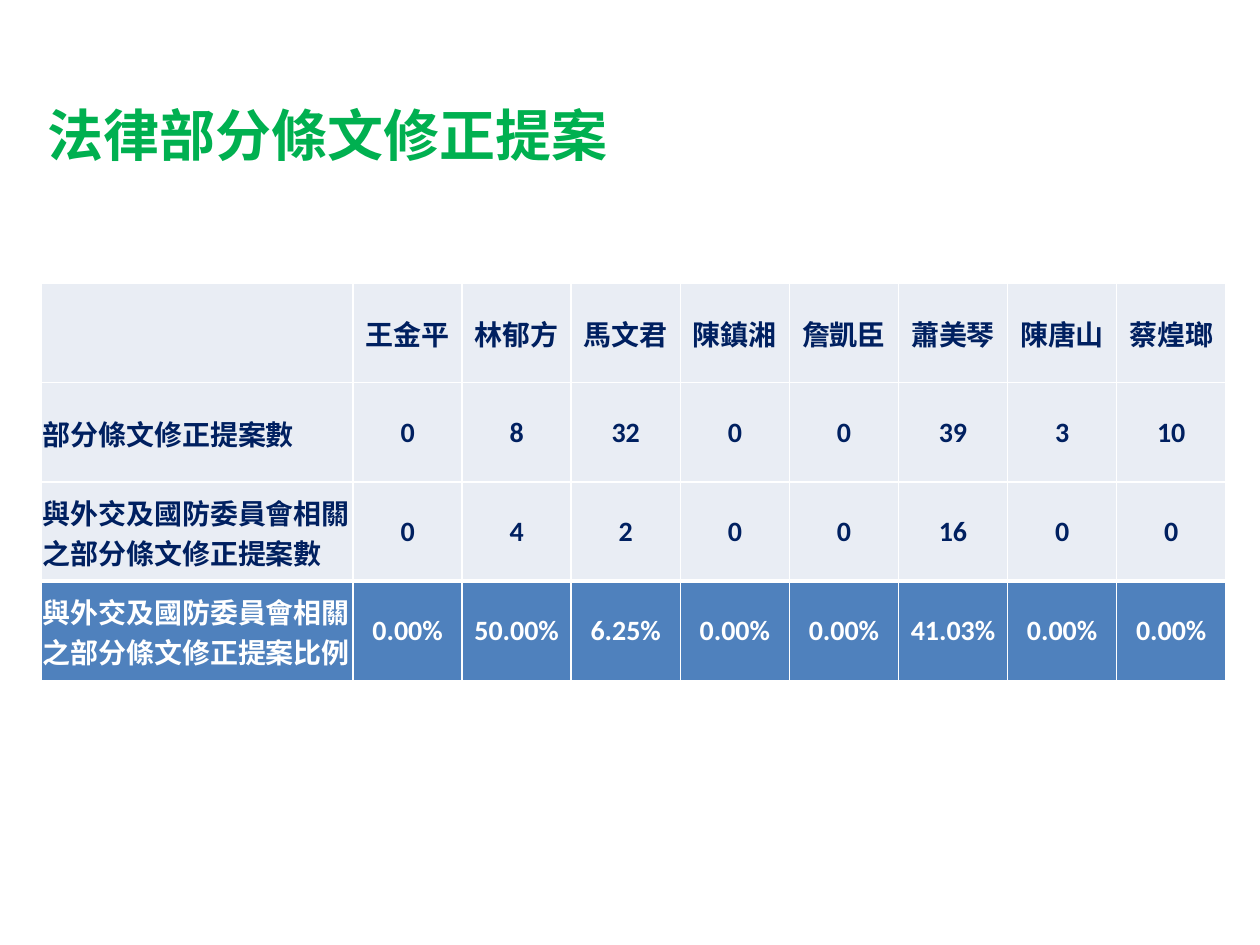
from lxml import etree
from pptx import Presentation, util as u
from pptx.dml.color import RGBColor
from pptx.enum import text
from pptx.oxml.ns import qn

GREEN = RGBColor(0x00, 0xB0, 0x50)
NAVY = RGBColor(0x00, 0x20, 0x60)
BLUE = RGBColor(0x4F, 0x81, 0xBD)
PALE = RGBColor(0xE9, 0xED, 0xF4)
WHITE = RGBColor(0xFF, 0xFF, 0xFF)

TITLE_FONT = "Noto Sans CJK SC"
NAMES = ["王金平", "林郁方", "馬文君", "陳鎮湘", "詹凱臣", "蕭美琴", "陳唐山", "蔡煌瑯"]
TOTALS = [0, 8, 32, 0, 0, 39, 3, 10]
RELATED = [0, 4, 2, 0, 0, 16, 0, 0]


def style_run(r, size, font, color):
    """Apply bold type of one size, font and colour to a run."""
    r.font.size, r.font.name, r.font.bold = u.Pt(size), font, True
    r.font.color.rgb = color


def set_borders(cell, top):
    """Draw white cell borders, with the given top width in points."""
    tc_pr = cell._tc.get_or_add_tcPr()
    for side, width in (("L", 1), ("R", 1), ("T", top), ("B", 1)):
        ln = etree.SubElement(tc_pr, qn(f"a:ln{side}"), w=str(u.Pt(width)))
        fill = etree.SubElement(ln, qn("a:solidFill"))
        etree.SubElement(fill, qn("a:srgbClr"), val=str(WHITE))


def add_title(s, box, title):
    """Place the slide title in the box."""
    tf = s.shapes.add_textbox(*box).text_frame
    tf.word_wrap = False
    tf.auto_size = text.MSO_AUTO_SIZE.SHAPE_TO_FIT_TEXT
    tf.text = title
    r = tf.paragraphs[0].runs[0]
    style_run(r, 32, TITLE_FONT, GREEN)
    etree.SubElement(r.font._element, qn("a:ea"), typeface=TITLE_FONT)


def format_cell(cell, value, label, ratio):
    """Fill one table cell, as a label or a value, plain or as a ratio."""
    set_borders(cell, 3 if ratio else 1)
    cell.fill.solid()
    cell.fill.fore_color.rgb = BLUE if ratio else PALE
    cell.vertical_anchor = text.MSO_ANCHOR.MIDDLE
    cell.margin_left = cell.margin_top = cell.margin_right = u.Inches(0.01)
    cell.margin_bottom = 0
    cell.text = value
    p = cell.text_frame.paragraphs[0]
    p.alignment = text.PP_ALIGN.LEFT if label else text.PP_ALIGN.CENTER
    for r in p.runs:
        style_run(r, 16, "Calibri", WHITE if ratio else NAVY)


def add_proposal_table(s, box, rows):
    """Place the proposal table, with its ratio row last, in the box."""
    count = len(rows[0])
    table = s.shapes.add_table(len(rows), count, *box).table
    table.first_row = table.horz_banding = False
    label_width = int(box[2] * 0.263)
    for i, col in enumerate(table.columns):
        col.width = (box[2] - label_width) // (count - 1) if i else label_width
    for i, row in enumerate(rows):
        for j, value in enumerate(row):
            format_cell(table.cell(i, j), value, j == 0, i == len(rows) - 1)


def main():
    """Build and save the slide."""
    prs = Presentation()
    prs.slide_width, prs.slide_height = u.Inches(10), u.Inches(7.5)
    s = prs.slides.add_slide(prs.slide_layouts[6])

    def box(x, y, w, h):
        """Turn shares of the slide into lengths."""
        W, H = prs.slide_width, prs.slide_height
        return int(x * W), int(y * H), int(w * W), int(h * H)

    ratios = [f"{a / b if b else 0:.2%}" for a, b in zip(RELATED, TOTALS)]
    rows = [
        ["", *NAMES],
        ["部分條文修正提案數", *map(str, TOTALS)],
        ["與外交及國防委員會相關之部分條文修正提案數", *map(str, RELATED)],
        ["與外交及國防委員會相關之部分條文修正提案比例", *ratios],
    ]
    add_title(s, box(0.028, 0.1, 0.469, 0.085), "法律部分條文修正提案")
    add_proposal_table(s, box(0.033, 0.3, 0.94, 0.42), rows)
    prs.save("out.pptx")


if __name__ == "__main__":
    main()
